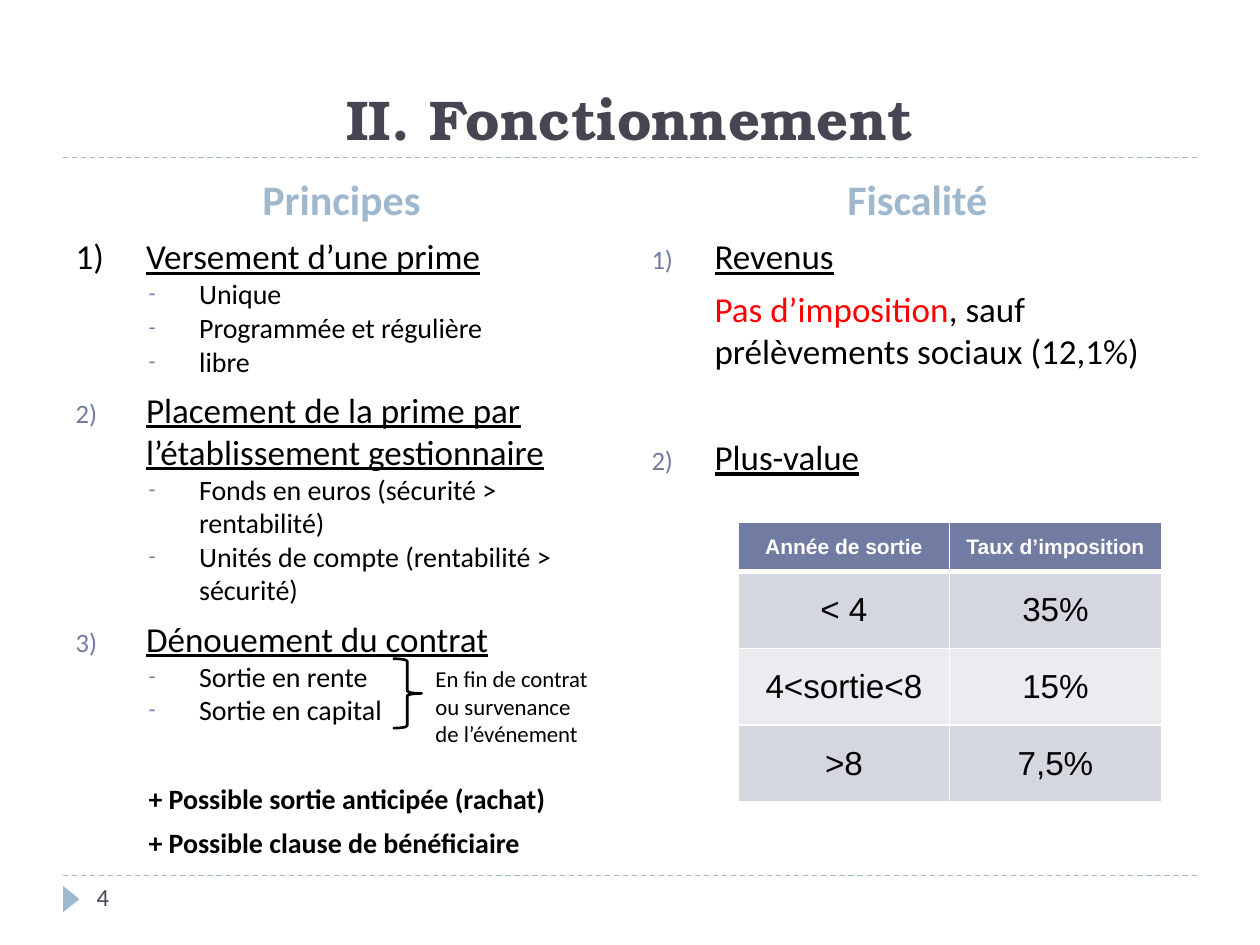
from dataclasses import dataclass
from typing import NamedTuple

from lxml import etree
from pptx import Presentation
from pptx.dml.color import RGBColor
from pptx.enum.dml import MSO_LINE
from pptx.enum.shapes import MSO_CONNECTOR, MSO_SHAPE
from pptx.enum.text import MSO_ANCHOR, MSO_AUTO_SIZE, PP_ALIGN
from pptx.oxml.ns import qn
from pptx.util import Cm, Pt

CENTER, LEFT = PP_ALIGN.CENTER, PP_ALIGN.LEFT
BOTTOM, MIDDLE, TOP = MSO_ANCHOR.BOTTOM, MSO_ANCHOR.MIDDLE, MSO_ANCHOR.TOP
NO_FIT = MSO_AUTO_SIZE.NONE
DASH = MSO_LINE.DASH
STRAIGHT = MSO_CONNECTOR.STRAIGHT
BRACE, ARROW = MSO_SHAPE.RIGHT_BRACE, MSO_SHAPE.ISOSCELES_TRIANGLE

BLACK, WHITE, RED = "000000", "FFFFFF", "FF0000"
SKY, SLATE, DARK = "9FB8CD", "727CA3", "464653"
BANDS = ["D5D7E0", "EBECF0"]
SANS = "Calibri"


class Box(NamedTuple):
    x: float
    y: float
    w: float
    h: float

    def cm(self) -> list:
        return [Cm(v) for v in self]


class Span(NamedTuple):
    text: str
    color: str | None = None
    under: bool = False


@dataclass
class Para:
    spans: list[Span]
    size: float
    gap: float = 0
    left: float = 0
    hang: float = 0
    mark: str | int | None = None
    color: str = BLACK
    bold: bool = False
    align: int = LEFT
    font: str = SANS


def rgb(code: str) -> RGBColor:
    return RGBColor.from_string(code)


def node(parent, tag: str, **attrs: str):
    return etree.SubElement(parent, qn(tag), attrs)


def bullet(props, mark: str | int | None) -> None:
    if mark is None:
        node(props, "a:buNone")
        return
    node(node(props, "a:buClr"), "a:srgbClr", val=SLATE)
    node(props, "a:buSzPct", val="76000")
    if isinstance(mark, int):
        node(props, "a:buAutoNum", type="arabicParenR", startAt=str(mark))
    else:
        node(props, "a:buChar", char=mark)


def write(frame, paras: list[Para], anchor: int = TOP) -> None:
    frame.word_wrap = True
    frame.auto_size = NO_FIT
    frame.vertical_anchor = anchor
    for i, item in enumerate(paras):
        para = frame.add_paragraph() if i else frame.paragraphs[0]
        para.alignment = item.align
        para.space_before = Pt(item.gap)
        props = para._p.get_or_add_pPr()
        props.set("marL", str(Cm(item.left)))
        props.set("indent", str(-Cm(item.hang)))
        bullet(props, item.mark)
        font = para.font
        font.name, font.size, font.bold = item.font, Pt(item.size), item.bold
        font.color.rgb = rgb(item.color)
        for span in item.spans:
            run = para.add_run()
            run.text = span.text
            if span.under:
                run.font.underline = True
            if span.color:
                run.font.color.rgb = rgb(span.color)


def place(shape, box: Box) -> None:
    shape.left, shape.top, shape.width, shape.height = box.cm()


def label(slide, box: Box, text: str, size: float, color: str) -> None:
    frame = slide.shapes.add_textbox(*box.cm()).text_frame
    write(frame, [Para([Span(text)], size, color=color)])


def rule(slide, y: float) -> None:
    line = slide.shapes.add_connector(STRAIGHT, Cm(1.27), Cm(y), Cm(24.13), Cm(y))
    line.line.color.rgb = rgb(SKY)
    line.line.width = Pt(0.75)
    line.line.dash_style = DASH
    node(line._element.spPr, "a:effectLst")


def heading(text: str) -> Para:
    return Para([Span(text)], 24, 6, color=SKY, bold=True, align=CENTER)


def topic(text: str, num: int, left: float) -> Para:
    return Para([Span(text, under=True)], 20, 6, left, left, num)


def dash(text: str) -> Para:
    return Para([Span(text)], 16, 0, 2.49, 1.02, "-")


def extra(text: str, gap: float) -> Para:
    return Para([Span(text)], 16, gap, 1.47, bold=True)


def border(cell, top: float, bottom: float) -> None:
    props = cell._tc.get_or_add_tcPr()
    for side, width in zip("LRTB", (1, 1, top, bottom)):
        line = node(props, f"a:ln{side}", w=str(Pt(width)))
        node(node(line, "a:solidFill"), "a:srgbClr", val=WHITE)


def rates(slide, box: Box, rows: list[tuple[str, str]]) -> None:
    table = slide.shapes.add_table(len(rows), 2, *box.cm()).table
    for col in table.columns:
        col.width = Cm(box.w / 2)
    for r, row in enumerate(rows):
        head = r == 0
        table.rows[r].height = Cm(1 if head else 1.55)
        for c, text in enumerate(row):
            cell = table.cell(r, c)
            border(cell, 3 if r == 1 else 1, 3 if head else 1)
            cell.fill.solid()
            cell.fill.fore_color.rgb = rgb(SLATE if head else BANDS[(r - 1) % 2])
            cell.vertical_anchor = MIDDLE
            para = cell.text_frame.paragraphs[0]
            para.text = text
            para.alignment = CENTER
            font = para.font
            font.name, font.size, font.bold = "Arial", Pt(12 if head else 19), head
            font.color.rgb = rgb(WHITE if head else BLACK)


def main() -> None:
    deck = Presentation()
    deck.slide_width, deck.slide_height = Cm(25.4), Cm(19.05)
    slide = deck.slides.add_slide(deck.slide_layouts[3])
    title, left, right = slide.placeholders

    for y in (17.65, 3.18):
        rule(slide, y)
    arrow = slide.shapes.add_shape(ARROW, *Box(1.17, 17.96, 0.53, 0.33).cm())
    arrow.rotation = 90
    arrow.shadow.inherit = False
    arrow.fill.solid()
    arrow.fill.fore_color.rgb = rgb(SKY)
    arrow.line.fill.background()

    place(title, Box(1.27, 0.64, 22.86, 2.54))
    name = Para([Span("II. Fonctionnement")], 32, color=DARK, bold=True,
                align=CENTER, font="TeX Gyre Bonum")
    write(title.text_frame, [name], BOTTOM)

    place(left, Box(1.27, 3.38, 11.23, 14.07))
    write(left.text_frame, [
        heading("Principes"),
        Para([Span("1)\t"), Span("Versement d’une prime", under=True)],
             20, 6, 1.42, 1.42),
        dash("Unique"),
        dash("Programmée et régulière"),
        dash("libre"),
        topic("Placement de la prime par l’établissement gestionnaire", 2, 1.42),
        dash("Fonds en euros (sécurité > rentabilité)"),
        dash("Unités de compte (rentabilité > sécurité)"),
        topic("Dénouement du contrat", 3, 1.42),
        dash("Sortie en rente"),
        dash("Sortie en capital"),
        extra("+ Possible sortie anticipée (rachat)", 31.5),
        extra("+ Possible clause de bénéficiaire", 6),
    ])

    place(right, Box(12.88, 3.38, 11.23, 13.72))
    plus = topic("Plus-value", 2, 1.27)
    plus.gap = 36.5
    write(right.text_frame, [
        heading("Fiscalité"),
        topic("Revenus", 1, 1.27),
        Para([Span("Pas d’imposition", RED),
              Span(", sauf prélèvements sociaux (12,1%)")], 20, 6, 1.27),
        plus,
    ])

    label(slide, Box(1.7, 17.65, 5.51, 1.02), "4", 14, DARK)
    brace = slide.shapes.add_shape(BRACE, *Box(7.92, 13.28, 0.58, 1.4).cm())
    brace.shadow.inherit = False
    brace.fill.background()
    brace.line.color.rgb = rgb(BLACK)
    brace.line.width = Pt(1.5)
    label(slide, Box(8.53, 13.28, 3.76, 1.93),
          "En fin de contrat ou survenance de l’événement", 13, BLACK)
    rates(slide, Box(14.88, 10.52, 8.53, 5.65), [
        ("Année de sortie", "Taux d’imposition"),
        ("< 4", "35%"), ("4<sortie<8", "15%"), (">8", "7,5%"),
    ])
    deck.save("out.pptx")


if __name__ == "__main__":
    main()
